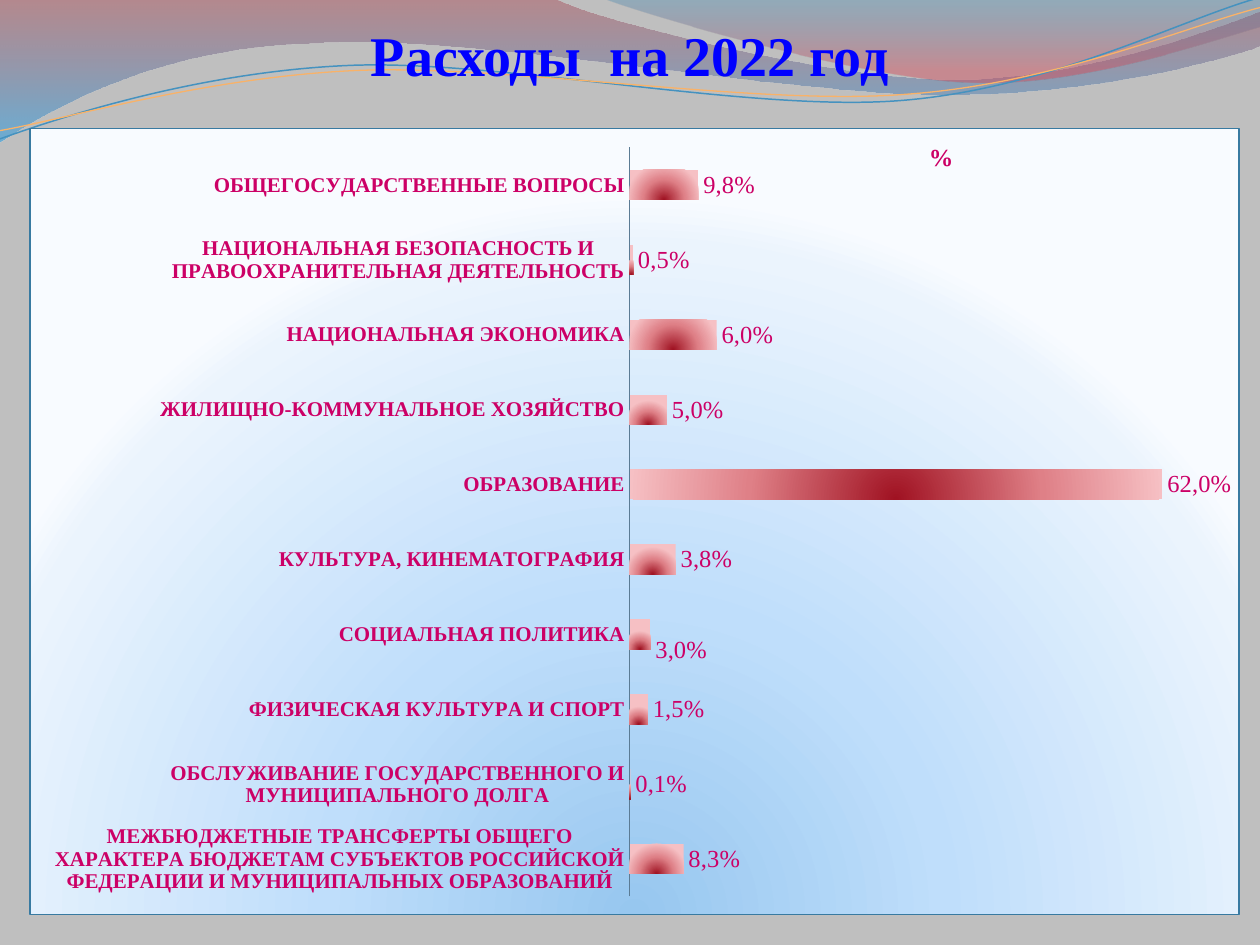
from collections import namedtuple

from lxml.etree import SubElement
from pptx import Presentation
from pptx.chart.data import CategoryChartData
from pptx.dml.color import RGBColor
from pptx.enum.chart import XL_CHART_TYPE as ChartType
from pptx.enum.chart import XL_LABEL_POSITION as LabelPosition
from pptx.enum.chart import XL_TICK_LABEL_POSITION as TickLabels
from pptx.enum.chart import XL_TICK_MARK as TickMark
from pptx.enum.text import MSO_ANCHOR as Anchor
from pptx.enum.text import PP_ALIGN as Align
from pptx.oxml import parse_xml
from pptx.oxml.ns import nsdecls, qn
from pptx.util import Cm, Pt

Box = namedtuple("Box", "left top width height")

BACKDROP = RGBColor(0xBF, 0xBF, 0xBF)
TITLE_BLUE = RGBColor(0x00, 0x00, 0xFF)
MAGENTA = RGBColor(0xCC, 0x00, 0x66)
BORDER_BLUE = RGBColor(0x38, 0x7A, 0xA1)
AXIS_SLATE = RGBColor(0x5B, 0x7B, 0x94)
WAVE_RED = RGBColor(0xA8, 0x47, 0x52)
WAVE_SKY = RGBColor(0x24, 0x9F, 0xE6)
WAVE_TEAL = RGBColor(0x2A, 0x7E, 0xAF)
WAVE_ROSE = RGBColor(0xD2, 0x4B, 0x5A)
LINE_BLUE = RGBColor(0x45, 0x92, 0xBF)
LINE_ORANGE = RGBColor(0xF9, 0xB2, 0x68)
BAR_STOPS = [(0, RGBColor(0xA0, 0x12, 0x22), 100), (55, RGBColor(0xDF, 0x80, 0x87), 100),
             (100, RGBColor(0xF6, 0xC0, 0xC4), 100)]
PANEL_STOPS = [(0, RGBColor(0x97, 0xC7, 0xEF), 100), (43, RGBColor(0xBF, 0xDE, 0xFB), 100),
               (93, RGBColor(0xEB, 0xF4, 0xFD), 100), (100, RGBColor(0xF8, 0xFB, 0xFF), 100)]
LINEAR = '<a:lin ang="5400000" scaled="0"/>'
RADIAL = '<a:path path="circle"><a:fillToRect l="50000" t="130000" r="50000" b="-30000"/></a:path>'
FONT = "Times New Roman"

BANDS = [
    ("LCCLCCC",
     [(0, 0), (4.4, -0.01), (4.76, 0.17), (6.64, 0.63), (7.58, 0.63), (8.53, 0.63), (9.58, 0.26),
      (10, 0.09), (10.01, 0.36), (9.83, 0.44), (8.7, 0.76), (7.46, 0.75), (6.22, 0.75),
      (3.82, 0.28), (2.57, 0.34), (1.29, 0.36), (0.46, 0.83), (-0.01, 1.13)],
     [(0, WAVE_RED, 45), (100, WAVE_SKY, 55)]),
    ("CCL",
     [(4.79, -0.01), (5.09, 0.11), (6.82, 0.62), (7.69, 0.65), (8.56, 0.69), (9.61, 0.32),
      (10, 0.21), (10, 0)],
     [(0, WAVE_TEAL, 30), (80, WAVE_ROSE, 45)]),
]
STRANDS = [
    ([(-0.02, 1.11), (0.48, 0.93), (1.58, 0.57), (2.77, 0.52), (3.95, 0.47), (5.93, 0.89),
      (7.13, 0.8), (8.33, 0.71), (9.38, 0.15), (10, -0.02)], LINE_BLUE, 0.85),
    ([(-0.02, 1.04), (0.47, 0.96), (1.64, 0.61), (2.83, 0.56), (4.03, 0.51), (5.97, 0.84),
      (7.17, 0.75), (8.36, 0.67), (9.41, 0.21), (10, 0.06)], LINE_ORANGE, 0.75),
]
EXPENSES = [
    ("МЕЖБЮДЖЕТНЫЕ ТРАНСФЕРТЫ ОБЩЕГО ХАРАКТЕРА БЮДЖЕТАМ СУБЪЕКТОВ РОССИЙСКОЙ ФЕДЕРАЦИИ "
     "И МУНИЦИПАЛЬНЫХ ОБРАЗОВАНИЙ", 0.062, "8,3%"),
    ("ОБСЛУЖИВАНИЕ ГОСУДАРСТВЕННОГО И МУНИЦИПАЛЬНОГО ДОЛГА", 0.001, "0,1%"),
    ("ФИЗИЧЕСКАЯ КУЛЬТУРА И СПОРТ", 0.021, "1,5%"),
    ("СОЦИАЛЬНАЯ ПОЛИТИКА", 0.024, "3,0%"),
    ("КУЛЬТУРА, КИНЕМАТОГРАФИЯ", 0.053, "3,8%"),
    ("ОБРАЗОВАНИЕ", 0.612, "62,0%"),
    ("ЖИЛИЩНО-КОММУНАЛЬНОЕ ХОЗЯЙСТВО", 0.043, "5,0%"),
    ("НАЦИОНАЛЬНАЯ ЭКОНОМИКА", 0.1, "6,0%"),
    ("НАЦИОНАЛЬНАЯ БЕЗОПАСНОСТЬ И ПРАВООХРАНИТЕЛЬНАЯ ДЕЯТЕЛЬНОСТЬ", 0.004, "0,5%"),
    ("ОБЩЕГОСУДАРСТВЕННЫЕ ВОПРОСЫ", 0.079, "9,8%"),
]
LOWERED_LABEL = 3


def assign(target, **values):
    """Set every given attribute on the target."""
    for name, value in values.items():
        setattr(target, name, value)


def style_font(font, size, bold, color=MAGENTA):
    """Give a font the slide's typeface with a size, weight and colour."""
    assign(font, name=FONT, size=Pt(size), bold=bold)
    font.color.rgb = color


def gradient_xml(stops, direction):
    """Return gradient markup for (position, colour, opacity) stops in percent."""
    marks = "".join(
        f'<a:gs pos="{pos * 1000}"><a:srgbClr val="{color}"><a:alpha val="{alpha * 1000}"/>'
        "</a:srgbClr></a:gs>" for pos, color, alpha in stops)
    return f'<a:gradFill {nsdecls("a")}><a:gsLst>{marks}</a:gsLst>{direction}</a:gradFill>'


def fill_gradient(fill, element, stops, direction):
    """Fill an element with the given gradient."""
    fill.gradient()
    plain = next(element.iter(qn("a:gradFill")))
    plain.getparent().replace(plain, parse_xml(gradient_xml(stops, direction)))


def place(parent, index, target="", modes="", **fractions):
    """Give a chart part a manual layout in fractions of the chart."""
    for old in parent.findall(qn("c:layout")):
        parent.remove(old)
    entries = "".join(f'<c:{name} val="{value}"/>' for name, value in fractions.items())
    parent.insert(index, parse_xml(
        f'<c:layout {nsdecls("c")}><c:manualLayout>{target}{modes}{entries}'
        "</c:manualLayout></c:layout>"))


def draw_path(slide, box, kinds, points, closed):
    """Draw lines (L) and cubic curves (C) in units of a tenth of the box width."""
    unit = box.width / 10
    spots = [(round(box.left + x * unit), round(box.top + y * unit)) for x, y in points]
    builder = slide.shapes.build_freeform(*spots[0])
    builder.add_line_segments(spots[1:], close=closed)
    outline = builder.convert_to_shape()
    outline.shadow.inherit = False
    segments = iter(list(outline.element.iter(qn("a:lnTo"))))
    for kind in kinds:
        segment = next(segments)
        if kind == "C":
            segment.tag = qn("a:cubicBezTo")
            for follower in (next(segments), next(segments)):
                SubElement(segment, qn("a:pt"), dict(follower[0].attrib))
                follower.getparent().remove(follower)
    return outline


def add_waves(slide, box):
    """Draw the translucent bands and thin strands along the top."""
    for kinds, points, stops in BANDS:
        band = draw_path(slide, box, kinds, points, True)
        fill_gradient(band.fill, band.element, stops, LINEAR)
        band.line.fill.background()
    for points, color, weight in STRANDS:
        strand = draw_path(slide, box, "CCC", points, False)
        strand.fill.background()
        strand.line.color.rgb = color
        strand.line.width = Pt(weight)


def add_heading(slide, box):
    """Place the slide title in front of the waves."""
    heading = slide.shapes.title
    slide.shapes.element.append(heading.element)
    assign(heading, **box._asdict())
    frame = heading.text_frame
    assign(frame, text="Расходы  на 2022 год", vertical_anchor=Anchor.BOTTOM, word_wrap=True,
           margin_left=0, margin_right=0, margin_top=Cm(0.13), margin_bottom=0)
    frame.paragraphs[0].alignment = Align.CENTER
    style_font(frame.paragraphs[0].runs[0].font, 32, True, TITLE_BLUE)


def label_bars(series):
    """Write the share beside each bar."""
    labels = series.data_labels
    assign(labels, show_value=True, number_format="0.0%", number_format_is_linked=False)
    style_font(labels.font, 14, False)
    for index, (_, _, share) in enumerate(EXPENSES):
        label = series.points[index].data_label
        label.text_frame.text = share
        style_font(label.text_frame.paragraphs[0].runs[0].font, 14, False)
        label.position = LabelPosition.OUTSIDE_END
    lowered = labels._element.findall(qn("c:dLbl"))[LOWERED_LABEL]
    place(lowered, 1, x=0, y=0.02)


def add_expenses_chart(slide, box):
    """Add the bar chart of expenses by section."""
    expenses = CategoryChartData(number_format="0.0%")
    expenses.categories = [section for section, _, _ in EXPENSES]
    expenses.add_series("%", [value for _, value, _ in EXPENSES])
    chart = slide.shapes.add_chart(ChartType.BAR_CLUSTERED, *box, expenses).chart
    style_font(chart.font, 12, True)
    assign(chart, has_legend=False, has_title=True)
    caption = chart.chart_title.text_frame
    caption.text = "%"
    style_font(caption.paragraphs[0].runs[0].font, 14, True)
    edges = '<c:xMode val="edge"/><c:yMode val="edge"/>'
    title_part = chart.chart_title._element
    place(title_part, 1, modes=edges, x=0.74, y=0.01)
    title_part.find(qn("c:overlay")).set("val", "1")
    plot_area = chart._chartSpace.chart.plotArea
    place(plot_area, 0, '<c:layoutTarget val="inner"/>', edges, x=0.496, y=0.024, w=0.504, h=0.953)

    sections, shares = chart.category_axis, chart.value_axis
    assign(sections, major_tick_mark=TickMark.NONE, minor_tick_mark=TickMark.NONE,
           tick_label_position=TickLabels.NEXT_TO_AXIS, has_major_gridlines=False)
    sections.format.line.color.rgb = AXIS_SLATE
    sections.format.line.width = Pt(0.5)
    assign(shares, visible=False, has_major_gridlines=False, minimum_scale=0, maximum_scale=0.7)
    assign(shares.tick_labels, number_format="0.0%", number_format_is_linked=False)

    plot = chart.plots[0]
    assign(plot, gap_width=150, overlap=-25, vary_by_categories=False)
    bars = plot.series[0]
    fill_gradient(bars.format.fill, bars._element, BAR_STOPS, RADIAL)
    label_bars(bars)
    chart._chartSpace.chart.addnext(parse_xml(
        f'<c:spPr {nsdecls("c", "a")}>{gradient_xml(PANEL_STOPS, RADIAL)}<a:ln w="{Pt(0.75)}">'
        f'<a:solidFill><a:srgbClr val="{BORDER_BLUE}"/></a:solidFill></a:ln></c:spPr>'))


def main():
    """Build the slide and save it."""
    deck = Presentation()
    assign(deck, slide_width=Cm(25.4), slide_height=Cm(19.05))
    slide = deck.slides.add_slide(deck.slide_layouts[5])
    slide.background.fill.solid()
    slide.background.fill.fore_color.rgb = BACKDROP
    add_waves(slide, Box(0, 0, Cm(25.4), Cm(2.9)))
    add_heading(slide, Box(0, Cm(0.58), Cm(25.4), Cm(1.19)))
    add_expenses_chart(slide, Box(Cm(0.59), Cm(2.58), Cm(24.4), Cm(15.87)))
    deck.save("out.pptx")


if __name__ == "__main__":
    main()
